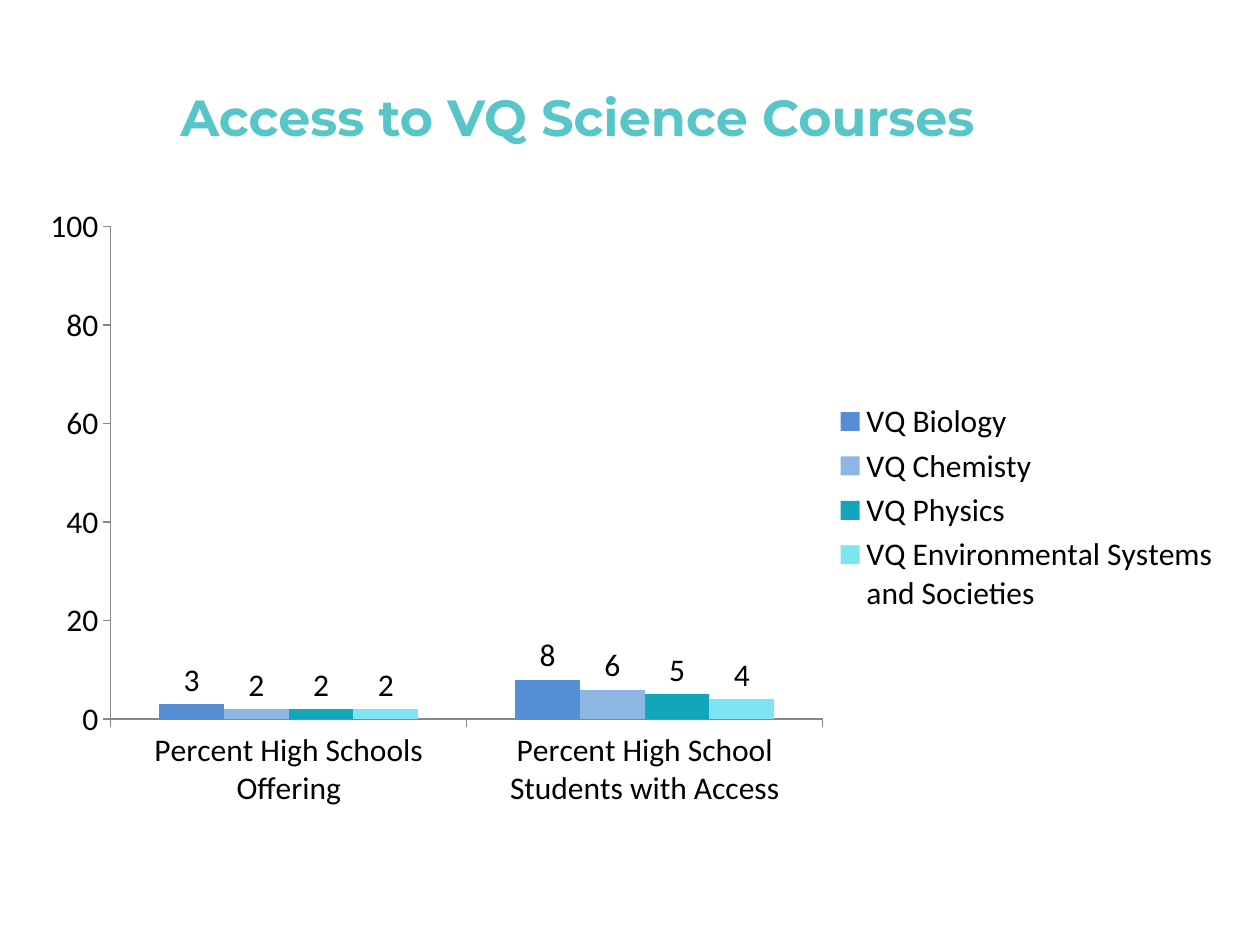
from lxml import etree
from pptx import Presentation
from pptx.chart.data import CategoryChartData
from pptx.dml.color import RGBColor
from pptx.enum.chart import XL_CHART_TYPE, XL_LABEL_POSITION, XL_LEGEND_POSITION, XL_TICK_MARK
from pptx.enum.text import MSO_ANCHOR, PP_ALIGN
from pptx.util import Cm, Pt

COLUMNS = XL_CHART_TYPE.COLUMN_CLUSTERED
ABOVE = XL_LABEL_POSITION.OUTSIDE_END
RIGHT = XL_LEGEND_POSITION.RIGHT
OUT, NO_TICK = XL_TICK_MARK.OUTSIDE, XL_TICK_MARK.NONE
MIDDLE, LEFT = MSO_ANCHOR.MIDDLE, PP_ALIGN.LEFT
C_NS = "http://schemas.openxmlformats.org/drawingml/2006/chart"

# Content
TITLE = "Access to VQ Science Courses"
CATEGORIES = ["Percent High Schools Offering", "Percent High School Students with Access"]
SERIES = [
    ("VQ Biology", (3, 8), "558ED5"),
    ("VQ Chemisty", (2, 6), "8EB6E3"),
    ("VQ Physics", (2, 5), "13A6BA"),
    ("VQ Environmental Systems and Societies", (2, 4), "7FE4F2"),
]
TITLE_BOX = (3.38, 0.76, 20.75, 3.18)
CHART_BOX = (0.53, 3.94, 24.33, 12.57)
PLOT_AREA = {"x": 0.07, "y": 0.05, "w": 0.59, "h": 0.79}
TITLE_FONT = {"name": "Montserrat", "size": Pt(29), "bold": True}
CHART_FONT = {"name": "Calibri", "size": Pt(18), "bold": False}


def rgb(value):
    return RGBColor.from_string(value)


def style_font(font, values, color):
    for name, value in values.items():
        setattr(font, name, value)
    font.color.rgb = rgb(color)


def place_plot(chart, area):
    """Fix the inner plot area as fractions of the chart."""
    plot_area = chart.plots[0]._element.getparent()
    for old in plot_area.findall(f"{{{C_NS}}}layout"):
        plot_area.remove(old)
    layout = etree.Element(f"{{{C_NS}}}layout")
    manual = etree.SubElement(layout, f"{{{C_NS}}}manualLayout")
    settings = {"layoutTarget": "inner", "xMode": "edge", "yMode": "edge", **area}
    for tag, value in settings.items():
        etree.SubElement(manual, f"{{{C_NS}}}{tag}").set("val", str(value))
    plot_area.insert(0, layout)


prs = Presentation()
prs.slide_width, prs.slide_height = Cm(25.4), Cm(19.05)
s = prs.slides.add_slide(prs.slide_layouts[5])

# Title
title = s.shapes.title
title.left, title.top, title.width, title.height = map(Cm, TITLE_BOX)
tf = title.text_frame
tf.vertical_anchor = MIDDLE
p = tf.paragraphs[0]
p.alignment = LEFT
r = p.add_run()
r.text = TITLE
style_font(r.font, TITLE_FONT, "58C5C9")

# Chart
data = CategoryChartData()
data.categories = CATEGORIES
for name, values, _ in SERIES:
    data.add_series(name, values)
chart = s.shapes.add_chart(COLUMNS, *map(Cm, CHART_BOX), data).chart
style_font(chart.font, CHART_FONT, "000000")
chart.has_title = False
place_plot(chart, PLOT_AREA)

# Columns and value labels
plot = chart.plots[0]
plot.gap_width, plot.overlap = 150, 0
plot.vary_by_categories = False
for series, (_, _, color) in zip(plot.series, SERIES):
    series.format.fill.solid()
    series.format.fill.fore_color.rgb = rgb(color)
    labels = series.data_labels
    labels.show_value = True
    labels.position = ABOVE

# Axes and legend
for axis in (chart.category_axis, chart.value_axis):
    axis.has_major_gridlines = False
    axis.major_tick_mark, axis.minor_tick_mark = OUT, NO_TICK
    axis.format.line.color.rgb = rgb("868686")
    axis.format.line.width = Pt(0.75)
scale = {"minimum_scale": 0, "maximum_scale": 100, "major_unit": 20}
for name, value in scale.items():
    setattr(chart.value_axis, name, value)
chart.has_legend = True
chart.legend.position = RIGHT
chart.legend.include_in_layout = False

prs.save("out.pptx")
